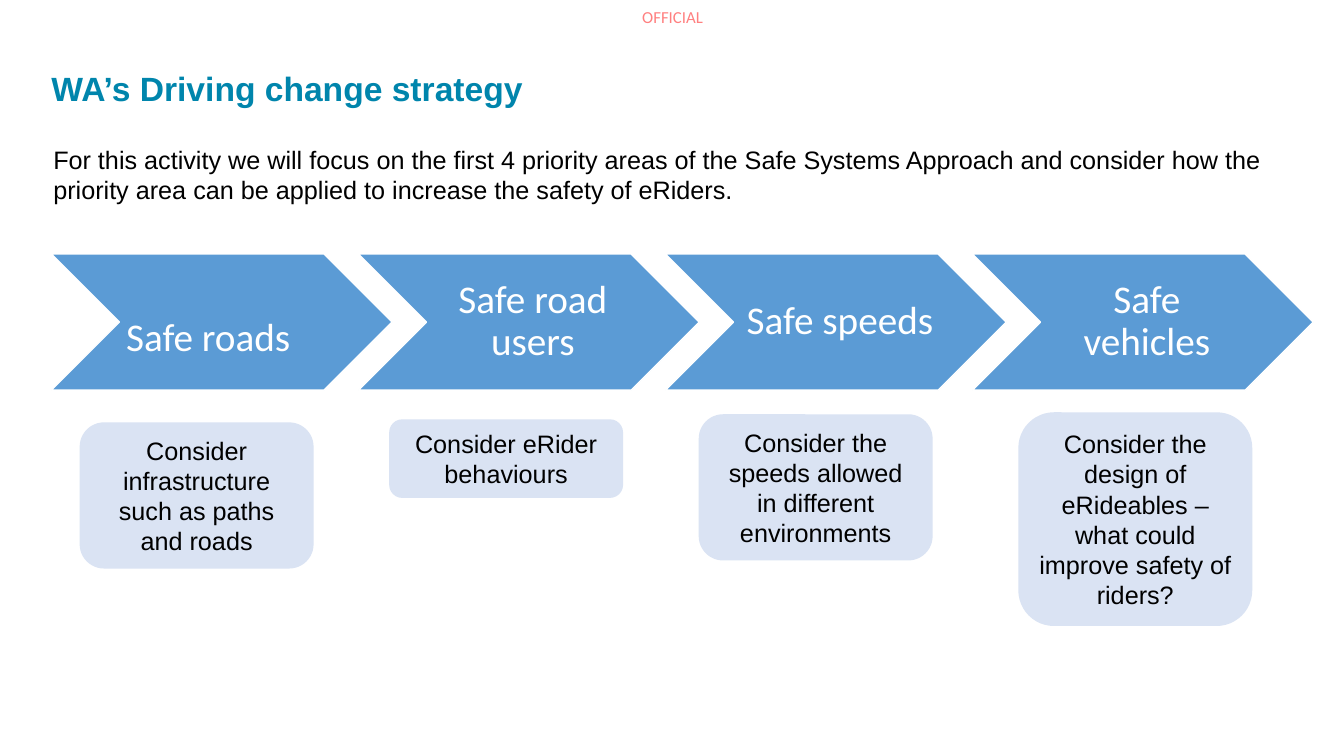
"""Build the slide on the four priority areas of the Driving change strategy."""
from dataclasses import dataclass

from pptx import Presentation
from pptx.dml.color import RGBColor
from pptx.enum import shapes, text
from pptx.util import Inches, Pt

MARK = "OFFICIAL"
TITLE = "WA’s Driving change strategy"
INTRO = (
    "For this activity we will focus on the first 4 priority areas of the Safe "
    "Systems Approach and consider how the priority area can be applied to "
    "increase the safety of eRiders."
)
ROOMY = (0.12, 0.04, 0.04, 0.04)
STEPS = [
    ("Safe roads", (0.02, 0.36, 0.29, 0.02)),
    ("Safe road users", ROOMY),
    ("Safe speeds", ROOMY),
    ("Safe vehicles", ROOMY),
]
NOTES = [
    ("Consider infrastructure such as paths and roads", 0.79, 4.19, 1.45),
    ("Consider eRider behaviours", 3.86, 4.16, 0.78),
    ("Consider the speeds allowed in different environments", 6.93, 4.11, 1.45),
    ("Consider the design of eRideables – what could improve safety of riders?",
     10.1, 4.09, 2.12),
]
WIDE, HIGH = 13.33, 7.5
LEFT, TOP = 0.51, 2.52
STEP_W, STEP_H, PITCH = 3.38, 1.35, 3.045
NOTE_W = 2.32
PAD = (0.1, 0.05, 0.1, 0.05)
FLUSH = (0, 0, 0, 0)


@dataclass(frozen=True)
class Theme:
    head: str = "0085AC"
    step: str = "5B9BD5"
    note: str = "DAE3F3"
    mark: str = "FF8080"
    ink: str = "000000"
    white: str = "FFFFFF"
    sans: str = "Arial"
    soft: str = "Calibri"
    small: int = 12
    body: int = 18
    large: int = 24
    huge: int = 28


LOOK = Theme()


def write(shape, words, size, face, tone, pad=PAD, align=text.PP_ALIGN.LEFT,
          anchor=text.MSO_ANCHOR.TOP, space=1.0, bold=False, wrap=True):
    frame = shape.text_frame
    frame.text = words
    frame.word_wrap = wrap
    frame.auto_size = text.MSO_AUTO_SIZE.NONE
    frame.vertical_anchor = anchor
    (frame.margin_left, frame.margin_top,
     frame.margin_right, frame.margin_bottom) = map(Inches, pad)
    para = frame.paragraphs[0]
    para.alignment = align
    para.line_spacing = space
    font = para.font
    font.size, font.name, font.bold = Pt(size), face, bold
    font.color.rgb = RGBColor.from_string(tone)


def block(slide, kind, box, fill, edge=None):
    shape = slide.shapes.add_shape(kind, *map(Inches, box))
    shape.shadow.inherit = False
    shape.fill.solid()
    shape.fill.fore_color.rgb = RGBColor.from_string(fill)
    if edge:
        shape.line.color.rgb = RGBColor.from_string(edge)
        shape.line.width = Pt(1)
    else:
        shape.line.fill.background()
    return shape


def main():
    deck = Presentation()
    deck.slide_width, deck.slide_height = Inches(WIDE), Inches(HIGH)
    slide = deck.slides.add_slide(deck.slide_layouts[5])
    mid = {"align": text.PP_ALIGN.CENTER, "anchor": text.MSO_ANCHOR.MIDDLE}

    mark = slide.shapes.add_textbox(*map(Inches, (6.37, 0.07, 0.64, 0.2)))
    write(mark, MARK, LOOK.small, LOOK.soft, LOOK.mark, FLUSH, wrap=False)

    title = slide.shapes.title
    title.left, title.top, title.width, title.height = map(
        Inches, (LEFT, 0.72, 11.97, 0.96))
    write(title, TITLE, LOOK.large, LOOK.sans, LOOK.head, FLUSH,
          space=0.9, bold=True)

    for col, (words, pad) in enumerate(STEPS):
        box = (LEFT + col * PITCH, TOP, STEP_W, STEP_H)
        step = block(slide, shapes.MSO_SHAPE.CHEVRON, box, LOOK.step, LOOK.white)
        write(step, words, LOOK.huge, LOOK.soft, LOOK.white, pad,
              space=0.9, **mid)

    for words, left, top, high in NOTES:
        note = block(slide, shapes.MSO_SHAPE.ROUNDED_RECTANGLE,
                     (left, top, NOTE_W, high), LOOK.note)
        write(note, words, LOOK.body, LOOK.sans, LOOK.ink, **mid)

    intro = slide.shapes.add_textbox(*map(Inches, (0.43, 1.38, 12.25, 0.71)))
    write(intro, INTRO, LOOK.body, LOOK.sans, LOOK.ink)

    deck.save("out.pptx")


if __name__ == "__main__":
    main()
